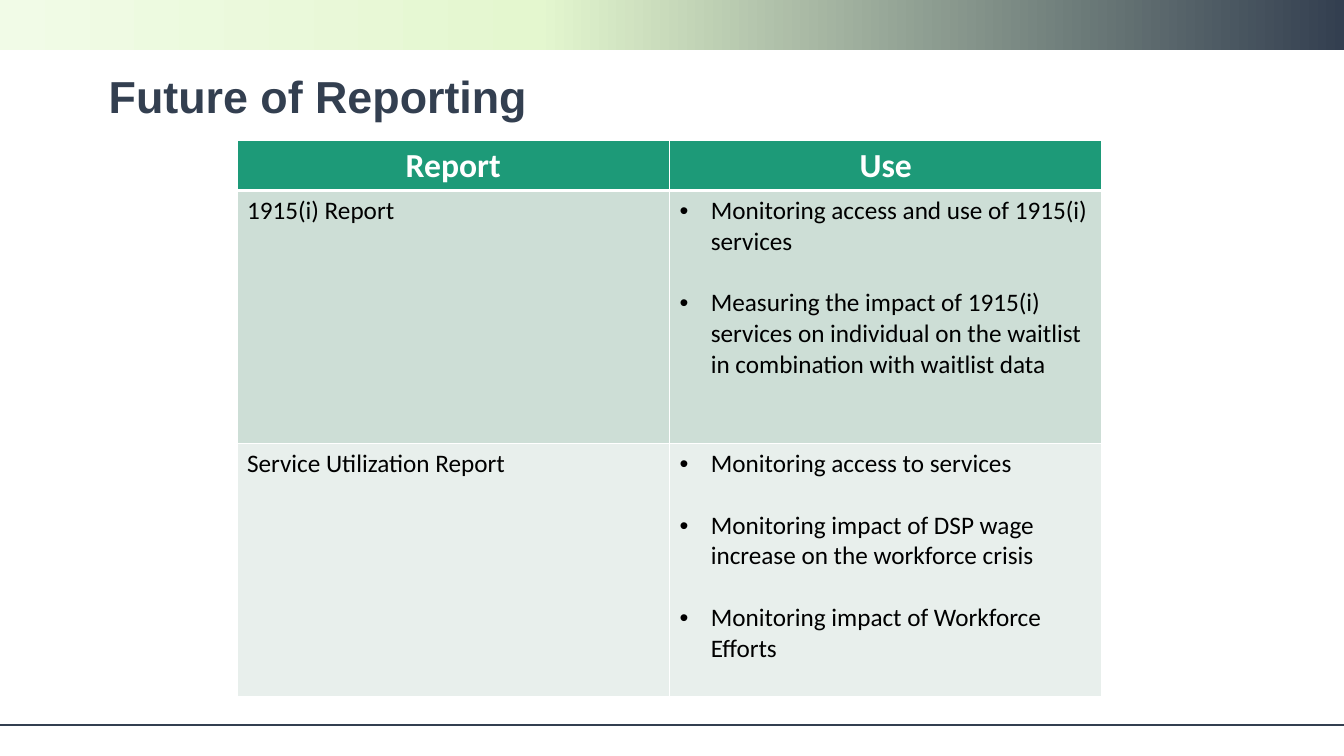
from lxml.etree import SubElement
from copy import deepcopy
from pptx import Presentation
from pptx.dml.color import RGBColor
from pptx.enum.shapes import MSO_CONNECTOR, MSO_SHAPE
from pptx.enum.text import MSO_ANCHOR, PP_ALIGN
from pptx.oxml.ns import qn
from pptx.util import Inches, Pt

NAVY = RGBColor(0x33, 0x3F, 0x50)
LIME = RGBColor(0xE4, 0xF7, 0xCF)
PALE = RGBColor(0xF1, 0xFB, 0xE7)
GREEN = RGBColor(0x1D, 0x9A, 0x78)
SAGE = RGBColor(0xCD, 0xDE, 0xD6)
MIST = RGBColor(0xE8, 0xEF, 0xEC)
WHITE = RGBColor(0xFF, 0xFF, 0xFF)
BLACK = RGBColor(0, 0, 0)

ROWS = [
    ("1915(i) Report", SAGE, [
        "Monitoring access and use of 1915(i) services",
        "Measuring the impact of 1915(i) services on individual on the waitlist "
        "in combination with waitlist data"]),
    ("Service Utilization Report", MIST, [
        "Monitoring access to services",
        "Monitoring impact of DSP wage increase on the workforce crisis",
        "Monitoring impact of Workforce Efforts"]),
]


def write(frame, lines, size=18, color=BLACK, font="Calibri", bold=False,
          align=PP_ALIGN.LEFT, bullet=False, gap=0, spacing=1.0):
    """Fill a text frame with one paragraph per line."""
    for i, line in enumerate(lines):
        para = frame.paragraphs[0] if i == 0 else frame.add_paragraph()
        para.alignment = align
        para.line_spacing = spacing
        if i:
            para.space_before = Pt(gap)
        run = para.add_run()
        run.text = line
        run.font.size, run.font.name, run.font.bold = Pt(size), font, bold
        run.font.color.rgb = color
        if bullet:
            props = para._p.get_or_add_pPr()
            props.set("marL", str(Inches(0.31)))
            props.set("indent", str(-Inches(0.31)))
            SubElement(props, qn("a:buFont"), typeface="Arial")
            SubElement(props, qn("a:buChar"), char="•")


class Deck:
    """Hold the slide and place elements by percent of its size."""

    def __init__(self):
        self.show = Presentation()
        self.show.slide_width = Inches(13.33)
        self.show.slide_height = Inches(7.5)
        self.slide = self.show.slides.add_slide(self.show.slide_layouts[6])
        self.shapes = self.slide.shapes

    def across(self, share):
        return round(self.show.slide_width * share / 100)

    def down(self, share):
        return round(self.show.slide_height * share / 100)

    def box(self, x, y, w, h):
        return self.across(x), self.down(y), self.across(w), self.down(h)

    def band(self, place, stops):
        bar = self.shapes.add_shape(MSO_SHAPE.RECTANGLE, *self.box(*place))
        bar.shadow.inherit = False
        bar.line.fill.background()
        bar.fill.gradient()
        bar.fill.gradient_angle = 0
        first = bar.fill._fill._gradFill.gsLst[0]
        first.addnext(deepcopy(first))
        for stop, (spot, color) in zip(bar.fill.gradient_stops, stops):
            stop.position, stop.color.rgb = spot, color

    def rule(self, y, color, width):
        line = self.shapes.add_connector(
            MSO_CONNECTOR.STRAIGHT, 0, self.down(y), self.across(100), self.down(y))
        line.line.color.rgb, line.line.width = color, Pt(width)
        SubElement(line._element.spPr, qn("a:effectLst"))

    def title(self, place, words):
        frame = self.shapes.add_textbox(*self.box(*place)).text_frame
        frame.word_wrap = True
        frame.vertical_anchor = MSO_ANCHOR.MIDDLE
        write(frame, [words], size=32, color=NAVY, font="Arial", bold=True, spacing=0.9)

    def cell(self, cell, lines, fill, top=1, base=1, **style):
        props = cell._tc.get_or_add_tcPr()
        for side, width in zip("LRTB", (1, 1, top, base)):
            edge = SubElement(props, qn(f"a:ln{side}"), w=str(Pt(width)))
            paint = SubElement(edge, qn("a:solidFill"))
            SubElement(paint, qn("a:srgbClr"), val=str(WHITE))
        cell.fill.solid()
        cell.fill.fore_color.rgb = fill
        write(cell.text_frame, lines, **style)

    def table(self, place, heads, rows, tall):
        grid = self.shapes.add_table(len(rows) + 1, len(heads), *self.box(*place)).table
        for row, share in zip(grid.rows, tall):
            row.height = self.down(share)
        for col, head in enumerate(heads):
            self.cell(grid.cell(0, col), [head], GREEN, base=3, size=24,
                      color=WHITE, bold=True, align=PP_ALIGN.CENTER)
        for i, (name, fill, uses) in enumerate(rows, 1):
            top = 3 if i == 1 else 1
            self.cell(grid.cell(i, 0), [name], fill, top=top)
            self.cell(grid.cell(i, 1), uses, fill, top=top, bullet=True, gap=22)


def main():
    deck = Deck()
    deck.band((0, 0, 100, 6.67), [(0, PALE), (0.4, LIME), (1, NAVY)])
    deck.rule(95.87, NAVY, 1.75)
    deck.title((7.35, 9.07, 85.82, 8), "Future of Reporting")
    deck.table((17.63, 18.53, 64.37, 73.6), ["Report", "Use"], ROWS, (6.67, 33.47, 33.47))
    deck.show.save("out.pptx")


if __name__ == "__main__":
    main()
